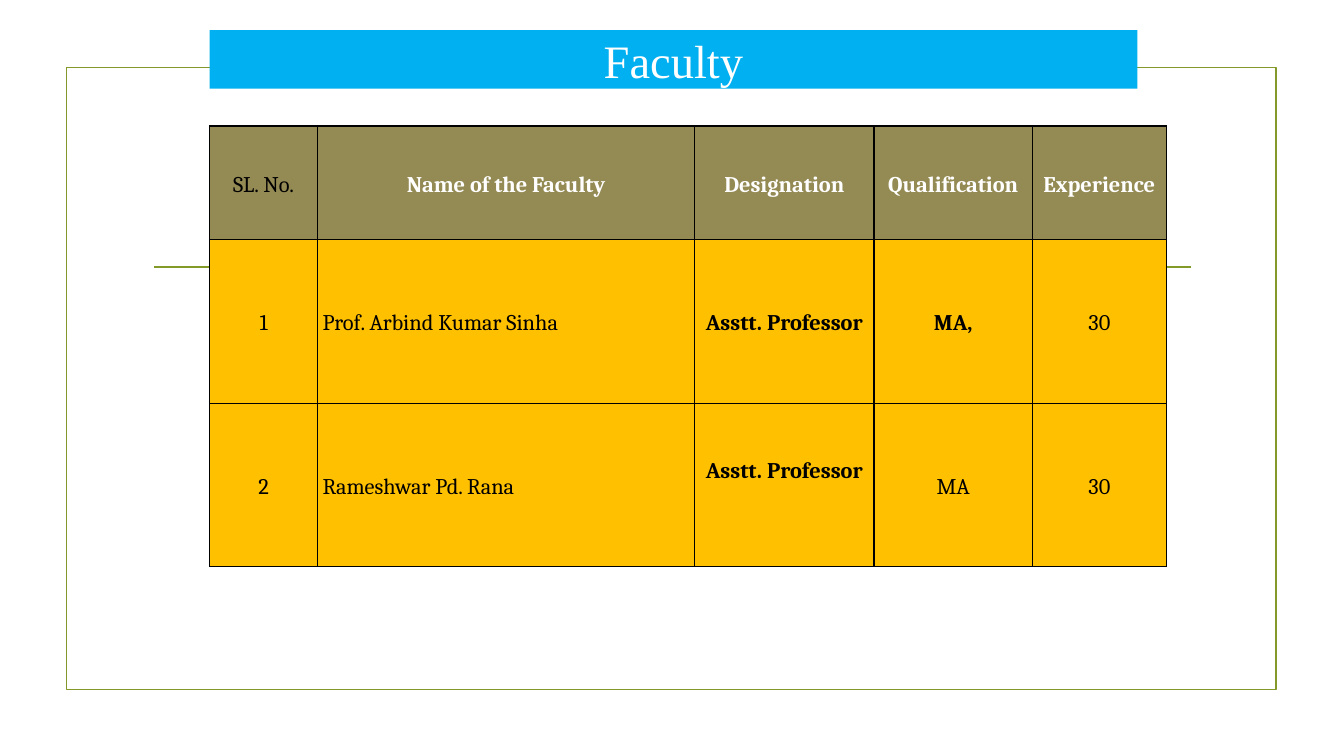
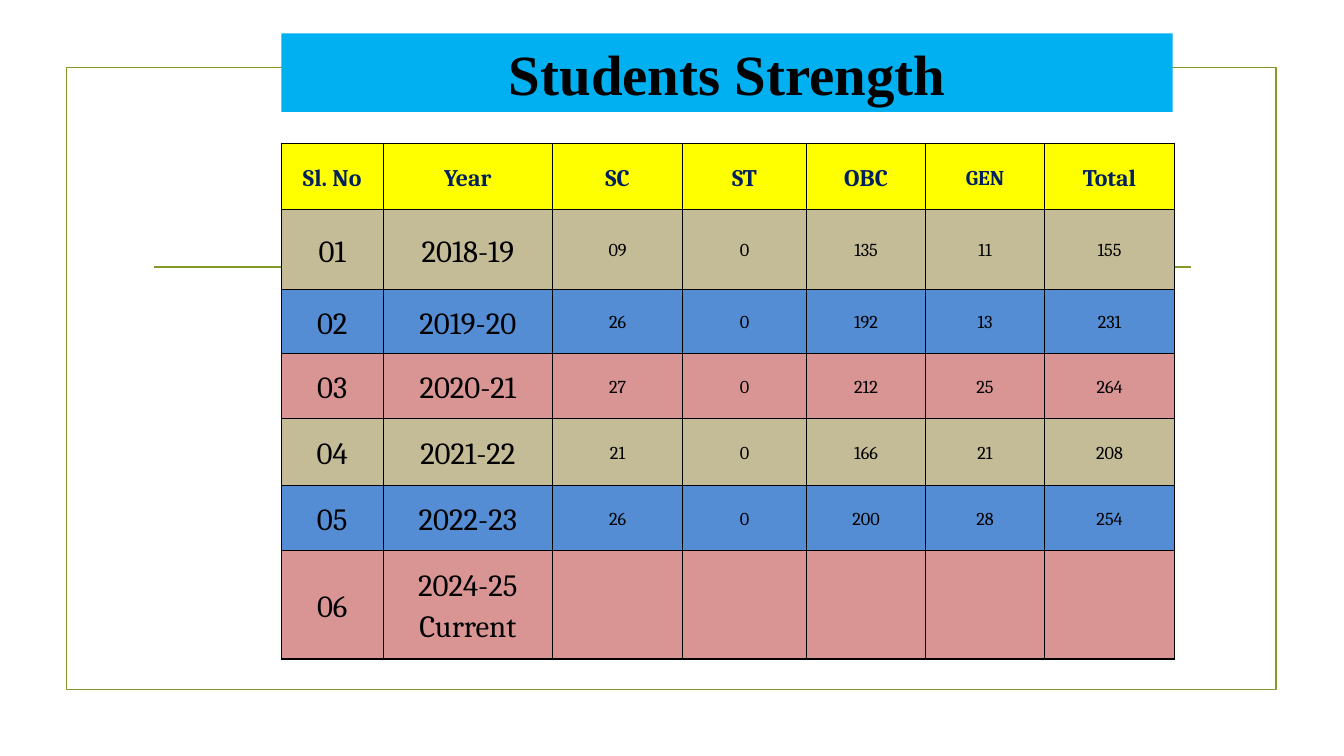
from lxml.etree import SubElement
from pptx import Presentation
from pptx.dml.color import RGBColor
from pptx.enum.shapes import MSO_CONNECTOR, MSO_SHAPE
from pptx.enum.text import MSO_ANCHOR, MSO_AUTO_SIZE, PP_ALIGN
from pptx.oxml.ns import qn
from pptx.util import Inches, Pt

COLORS = {
    "frame": "83992A", "band": "00B0F0", "white": "FFFFFF", "black": "000000",
    "olive": "948A54", "amber": "FFC000", "yellow": "FFFF00", "navy": "002060",
    "tan": "C4BC96", "blue": "548DD4", "rose": "D99594",
}
STRIPES = ["tan", "blue", "rose"]

FACULTY = [
    ["SL. No.", "Name of the Faculty", "Designation", "Qualification", "Experience"],
    ["1", "Prof. Arbind Kumar Sinha", "Asstt. Professor", "MA,", "30"],
    ["2", "Rameshwar Pd. Rana", "Asstt. Professor", "MA", "30"],
]
STUDENTS = [
    ["Sl. No", "Year", "SC", "ST", "OBC", "GEN", "Total"],
    ["01", "2018-19", "09", "0", "135", "11", "155"],
    ["02", "2019-20", "26", "0", "192", "13", "231"],
    ["03", "2020-21", "27", "0", "212", "25", "264"],
    ["04", "2021-22", "21", "0", "166", "21", "208"],
    ["05", "2022-23", "26", "0", "200", "28", "254"],
    ["06", "2024-25 Current", "", "", "", "", ""],
]


def rgb(name):
    """Return the palette colour with this name."""
    return RGBColor.from_string(COLORS[name])


def set_attrs(obj, values):
    """Set each attribute in a dict of format values."""
    for key, value in values.items():
        setattr(obj, key, value)


def write(tf, text, align, size, color, bold, font, spacing=1.0):
    """Write one formatted paragraph into a text frame."""
    p = tf.paragraphs[0]
    set_attrs(p, {"alignment": align, "line_spacing": spacing})
    r = p.add_run()
    r.text = text
    set_attrs(r.font, {"size": Pt(size), "bold": bold, "name": font})
    r.font.color.rgb = rgb(color)


def add_frame(s, layout):
    """Give the layout the outline and rule that all slides share."""
    for ph in list(layout.placeholders)[1:]:
        layout.shapes.element.remove(ph.element)
    rule = s.shapes.add_connector(MSO_CONNECTOR.STRAIGHT, Inches(1.53), Inches(2.65),
                                  Inches(11.81), Inches(2.65))
    SubElement(rule.element.spPr, qn("a:effectLst"))
    frame = s.shapes.add_shape(MSO_SHAPE.RECTANGLE, Inches(0.66), Inches(0.67),
                               Inches(12), Inches(6.17))
    frame.shadow.inherit = False
    frame.fill.background()
    for sp in (rule, frame):
        sp.line.color.rgb = rgb("frame")
        sp.line.width = Pt(1.25)
        layout.shapes.element.insert(2, sp.element)


def add_title(s, text, box, size, color, bold):
    """Place and format the title on its blue band."""
    sp = s.shapes.title
    set_attrs(sp, dict(zip(("left", "top", "width", "height"), map(Inches, box))))
    sp.fill.solid()
    sp.fill.fore_color.rgb = rgb("band")
    set_attrs(sp.text_frame, {"vertical_anchor": MSO_ANCHOR.MIDDLE, "word_wrap": True,
                              "auto_size": MSO_AUTO_SIZE.NONE})
    write(sp.text_frame, text, PP_ALIGN.CENTER, size, color, bold, "Times New Roman")


def add_borders(cell):
    """Draw a thin black line on each side of a cell."""
    tcPr = cell._tc.get_or_add_tcPr()
    for side in ("lnL", "lnR", "lnT", "lnB"):
        ln = SubElement(tcPr, qn(f"a:{side}"), w=str(Pt(1)))
        fill = SubElement(ln, qn("a:solidFill"))
        SubElement(fill, qn("a:srgbClr"), val=COLORS["black"])


def add_grid(s, data, left, top, widths, heights, pad, style):
    """Add a table whose cell formats come from style(row, column)."""
    tbl = s.shapes.add_table(len(data), len(widths), Inches(left), Inches(top),
                             Inches(sum(widths)), Inches(sum(heights))).table
    set_attrs(tbl, {"first_row": False, "horz_banding": False})
    for col, width in zip(tbl.columns, widths):
        col.width = Inches(width)
    for row, height in zip(tbl.rows, heights):
        row.height = Inches(height)
    for i, texts in enumerate(data):
        for j, text in enumerate(texts):
            cell = tbl.cell(i, j)
            look = {"align": PP_ALIGN.CENTER, "bottom": 0} | style(i, j)
            add_borders(cell)
            cell.fill.solid()
            cell.fill.fore_color.rgb = rgb(look.pop("fill"))
            set_attrs(cell, {"margin_left": Inches(pad), "margin_right": Inches(pad),
                             "margin_top": 0, "margin_bottom": Inches(look.pop("bottom")),
                             "vertical_anchor": MSO_ANCHOR.MIDDLE})
            if text:
                write(cell.text_frame, text, font="Cambria", spacing=1.15, **look)


def faculty_style(i, j):
    """Return the format of a cell in the faculty table."""
    if i == 0:
        return {"fill": "olive", "size": 16, "bold": j > 0,
                "color": "white" if j else "black"}
    look = {"fill": "amber", "size": 16, "color": "black",
            "bold": j == 2 or (i, j) == (1, 3)}
    if j == 1:
        look["align"] = PP_ALIGN.LEFT
    if (i, j) == (2, 2):
        look["bottom"] = 0.3
    return look


def students_style(i, j):
    """Return the format of a cell in the students table."""
    if i == 0:
        return {"fill": "yellow", "size": 15 if j == 5 else 17, "color": "navy", "bold": True}
    return {"fill": STRIPES[(i - 1) % len(STRIPES)], "size": 22 if j < 2 else 13,
            "color": "black", "bold": False}


def main():
    """Build and save the slides."""
    prs = Presentation()
    set_attrs(prs, {"slide_width": Inches(13.33), "slide_height": Inches(7.5)})
    layout = prs.slide_layouts[5]

    s = prs.slides.add_slide(layout)
    add_frame(s, layout)
    add_title(s, "Faculty", (2.08, 0.3, 9.2, 0.58), 33.2, "white", False)
    add_grid(s, FACULTY, 2.08, 1.25, [1.07, 3.74, 1.78, 1.57, 1.33],
             [1.13, 1.62, 1.62], 0.05, faculty_style)

    s = prs.slides.add_slide(layout)
    add_title(s, "Students Strength", (2.79, 0.33, 8.84, 0.78), 40.6, "black", True)
    add_grid(s, STUDENTS, 2.79, 1.42, [1.01, 1.68, 1.29, 1.23, 1.18, 1.18, 1.29],
             [0.66, 0.79, 0.64, 0.64, 0.67, 0.64, 1.08], 0.06, students_style)

    prs.save("out.pptx")


if __name__ == "__main__":
    main()
